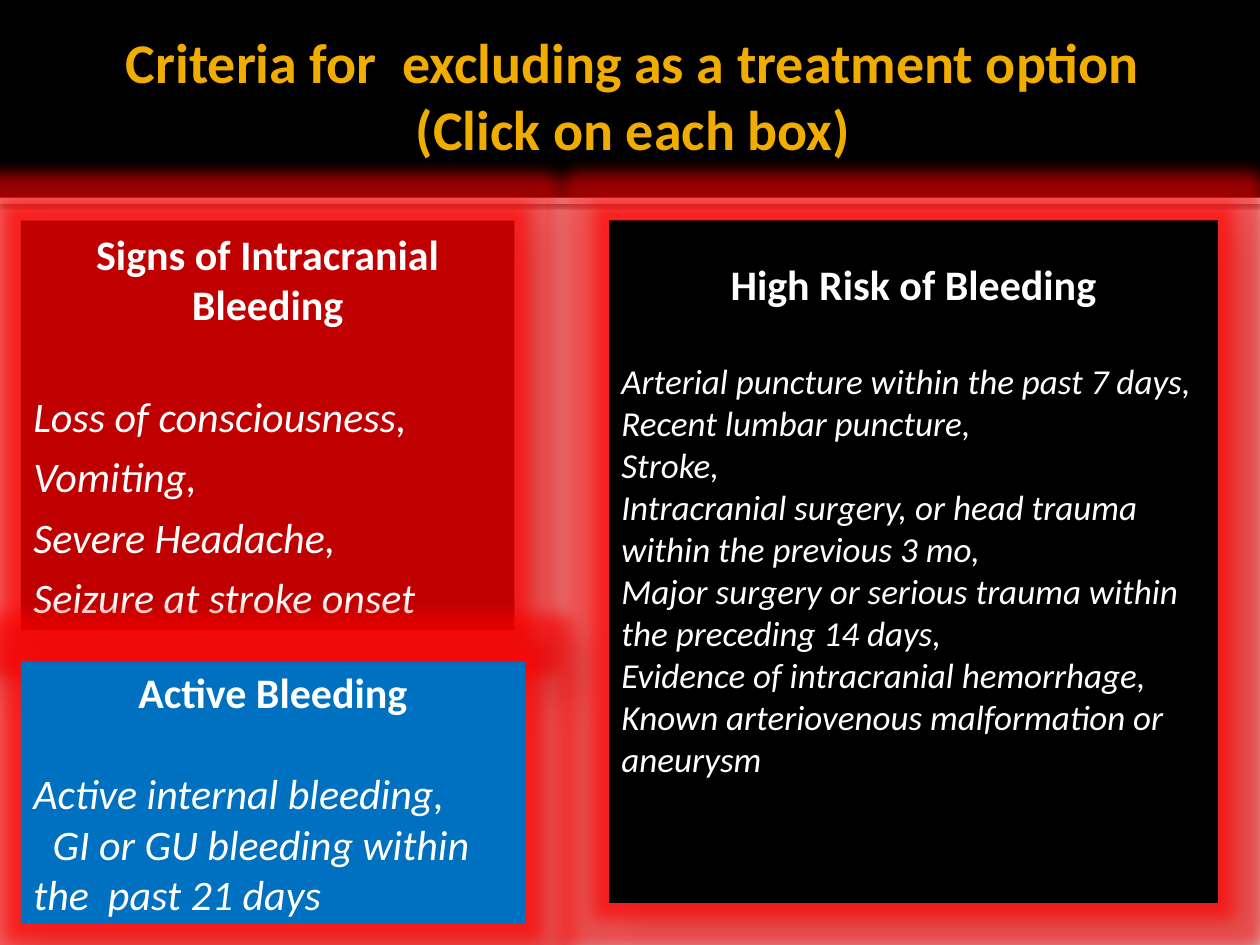
"""Build the slide on criteria for excluding a treatment option."""
from lxml import etree
from pptx import Presentation
from pptx.dml.color import RGBColor
from pptx.enum.shapes import MSO_SHAPE as Shape
from pptx.enum.text import MSO_ANCHOR as Anchor, PP_ALIGN as Align
from pptx.oxml.ns import qn
from pptx.util import Pt

COLORS = {"black": "000000", "white": "FFFFFF", "gold": "F0AD00",
          "red": "C00000", "blue": "0070C0", "glow": "FF0000"}
FONT = "Calibri"


def add_box(left, top, width, height, color):
    shape = slide.shapes.add_shape(
        Shape.RECTANGLE, Pt(left), Pt(top), Pt(width), Pt(height))
    shape.shadow.inherit = False
    shape.fill.solid()
    shape.fill.fore_color.rgb = RGBColor.from_string(COLORS[color])
    shape.line.fill.background()
    return shape


def add_effect(shape, tag, color, alpha, **sizes):
    effects = shape._element.spPr.find(qn("a:effectLst"))
    effect = etree.SubElement(effects, qn(tag))
    for name, value in sizes.items():
        effect.set(name, str(int(value)))
    fill = etree.SubElement(effect, qn("a:srgbClr"), val=COLORS[color])
    etree.SubElement(fill, qn("a:alpha"), val=str(alpha * 1000))


presentation = Presentation()
presentation.slide_width, presentation.slide_height = Pt(720), Pt(540)
slide = presentation.slides.add_slide(presentation.slide_layouts[5])

rule = add_box(0, 113, 720, 3.6, "white")
add_effect(rule, "a:outerShdw", "black", 60,
           blurRad=Pt(2.5), dist=Pt(0.8), dir=90 * 60000)
add_box(0, 0, 720, 113, "black")

title = slide.shapes.title
slide.shapes._spTree.append(title._element)
title.left, title.top, title.width, title.height = Pt(0), Pt(0), Pt(720), Pt(108)
frame = title.text_frame
frame.text = "Criteria for  excluding as a treatment option\v(Click on each box)"
frame.vertical_anchor = Anchor.MIDDLE
frame.margin_left, frame.margin_right = Pt(7.2), Pt(3.6)
paragraph = frame.paragraphs[0]
paragraph.alignment = Align.CENTER
paragraph.font.name, paragraph.font.size, paragraph.font.bold = FONT, Pt(32), True
paragraph.font.color.rgb = RGBColor.from_string(COLORS["gold"])

panels = [
    ((12, 126, 282, 234), "red", 24, 1.2, 3.6, "Signs of Intracranial Bleeding",
     ["Loss of consciousness,", "Vomiting,", "Severe Headache,",
      "Seizure at stroke onset"]),
    ((12, 378, 288, 150), "blue", 24, 1, 3.6, "Active Bleeding",
     ["Active internal bleeding,", "GI or GU bleeding within the  past 21 days"]),
    ((348, 126, 348, 390), "black", 20, 1, 52.4, "High Risk of Bleeding",
     ["Arterial puncture within the past 7 days,", "Recent lumbar puncture,",
      "Stroke,", "Intracranial surgery, or head trauma within the previous 3 mo,",
      "Major surgery or serious trauma within the preceding 14 days,",
      "Evidence of intracranial hemorrhage,",
      "Known arteriovenous malformation or aneurysm"]),
]

for bounds, color, size, spacing, bottom, heading, criteria in panels:
    panel = add_box(*bounds, color)
    add_effect(panel, "a:glow", "glow", 60, rad=Pt(18))
    add_effect(panel, "a:outerShdw", "black", 30,
               blurRad=Pt(15), dist=Pt(18), dir=45 * 60000)
    frame = panel.text_frame
    frame.word_wrap = True
    frame.vertical_anchor = Anchor.MIDDLE
    frame.margin_bottom = Pt(bottom)
    for index, text in enumerate([heading] + criteria):
        paragraph = frame.paragraphs[0] if index == 0 else frame.add_paragraph()
        paragraph.text = text
        paragraph.alignment = Align.LEFT if index else Align.CENTER
        if index:
            paragraph.line_spacing = spacing
        if index == 1:
            paragraph.space_before = Pt(29.3)
        if text.startswith("GI"):
            paragraph._p.get_or_add_pPr().set("indent", str(Pt(11)))
        font = paragraph.font
        font.name, font.size = FONT, Pt(size if index else 24)
        font.bold, font.italic = index == 0, index > 0
        font.color.rgb = RGBColor.from_string(COLORS["white"])

presentation.save("out.pptx")
